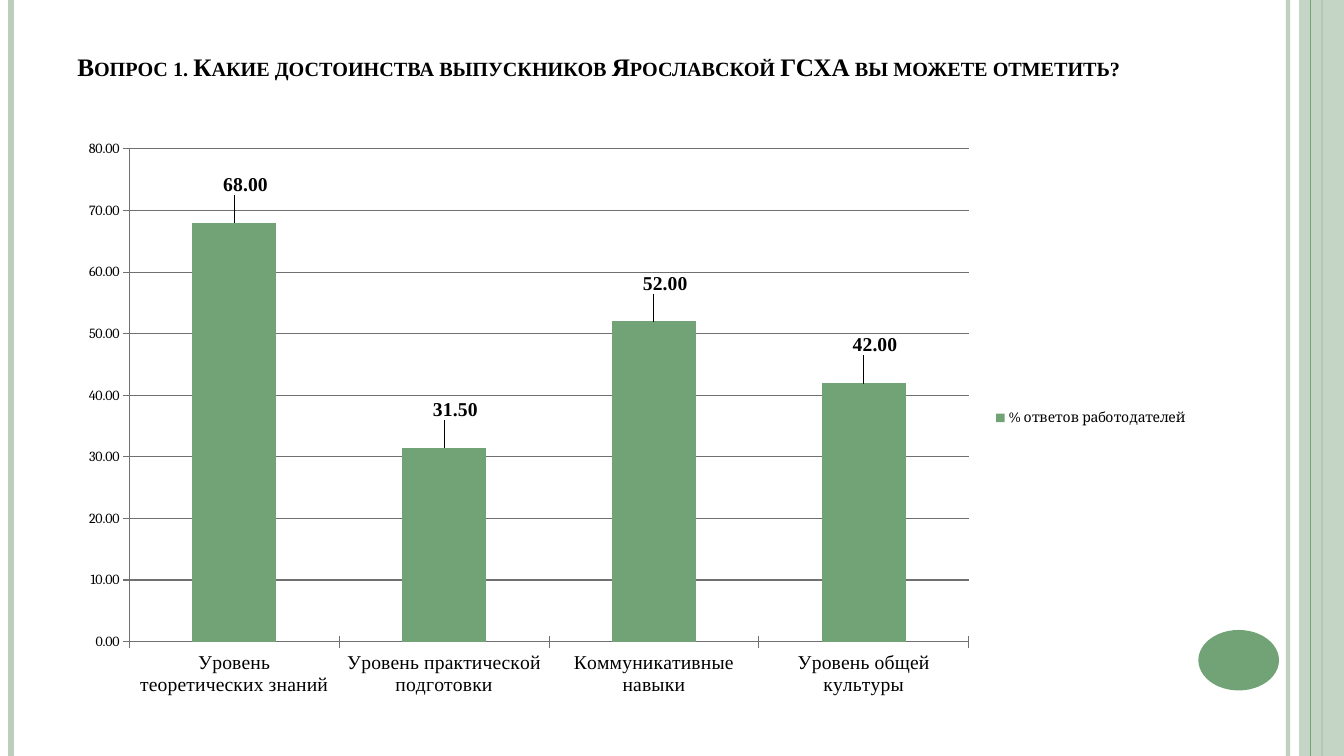
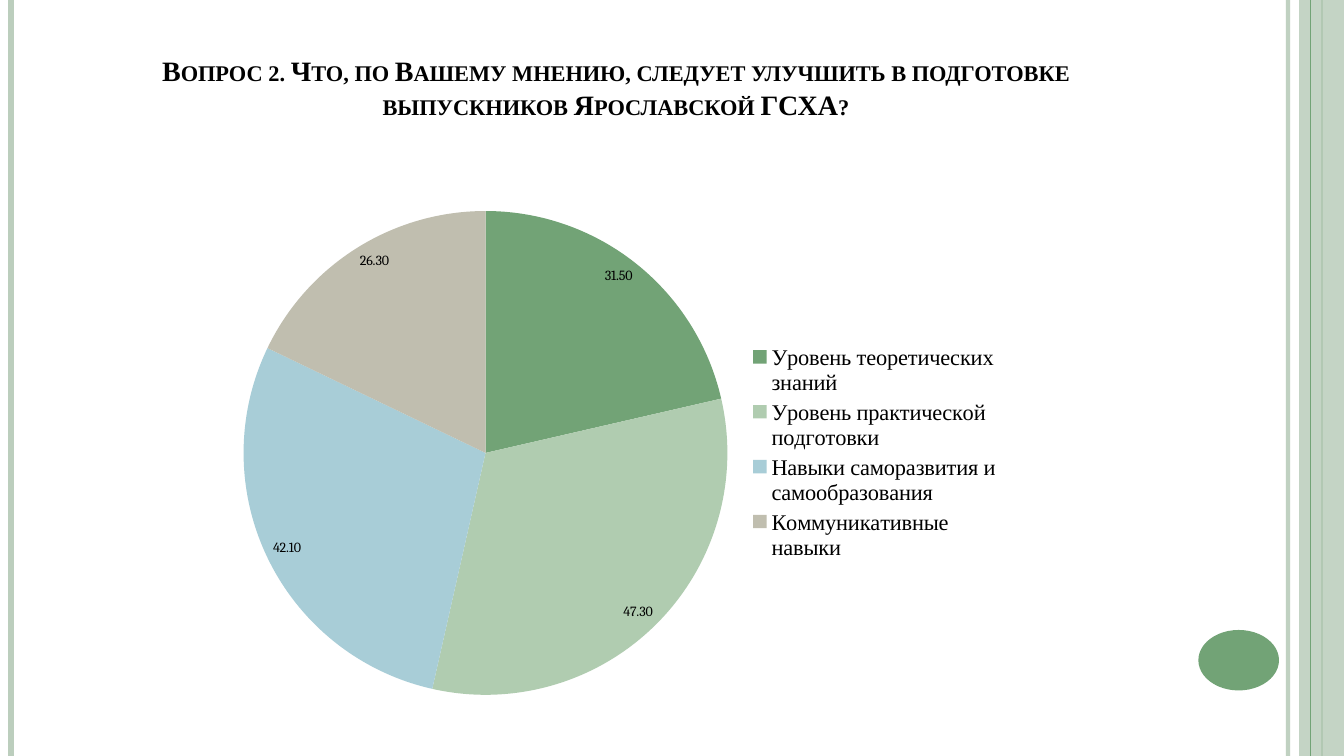
from lxml import etree
from pptx import Presentation
from pptx.chart import data as chart_data
from pptx.dml.color import RGBColor
from pptx.enum import chart as chart_enum, shapes, text
from pptx.oxml import ns
from pptx.util import Pt

GREEN = RGBColor(0x72, 0xA3, 0x76)
PALE_GREEN = RGBColor(0xBC, 0xCE, 0xBD)
LIGHT_GREEN = RGBColor(0xB0, 0xCC, 0xB0)
BLUE = RGBColor(0xA8, 0xCD, 0xD7)
SAND = RGBColor(0xC0, 0xBE, 0xAF)
GRAY = RGBColor(0x70, 0x70, 0x70)
BLACK = RGBColor(0, 0, 0)
SERIF = "Times New Roman"
BODY = "Cambria"


def write_title(box, wording, size, align):
    frame = box.text_frame
    frame.word_wrap = True
    frame.auto_size = text.MSO_AUTO_SIZE.NONE
    frame.vertical_anchor = text.MSO_ANCHOR.BOTTOM
    para = frame.paragraphs[0]
    para.alignment = align
    span = para.add_run()
    span.text = wording
    span.font.name = SERIF
    span.font.size = Pt(size)
    span.font.bold = True
    span.font.color.rgb = BLACK
    span.font._element.set("cap", "small")


def set_layout(parent, index, **settings):
    for old in parent.xpath("c:layout"):
        parent.remove(old)
    layout_node = etree.Element(ns.qn("c:layout"))
    manual = etree.SubElement(layout_node, ns.qn("c:manualLayout"))
    for name, value in settings.items():
        etree.SubElement(manual, ns.qn(f"c:{name}")).set("val", str(value))
    parent.insert(index, layout_node)


deck = Presentation()
deck.slide_width = Pt(960)
deck.slide_height = Pt(540)
layout = deck.slide_layouts[5]

questions = [
    {
        "title": "Вопрос 1. Какие достоинства выпускников Ярославской ГСХА вы можете отметить?",
        "title_box": (48, 22, 828, 40), "size": 18, "align": text.PP_ALIGN.LEFT,
        "kind": chart_enum.XL_CHART_TYPE.COLUMN_CLUSTERED,
        "chart_box": (48, 92, 808, 413), "plot_box": (0.055, 0.035, 0.742, 0.852),
        "series": "% ответов работодателей",
        "answers": {
            "Уровень теоретических знаний": 68,
            "Уровень практической подготовки": 31.5,
            "Коммуникативные навыки": 52,
            "Уровень общей культуры": 42,
        },
    },
    {
        "title": "Вопрос 2. Что, по Вашему мнению, следует улучшить в подготовке выпускников Ярославской ГСХА?",
        "title_box": (48, 22, 784, 68), "size": 20, "align": text.PP_ALIGN.CENTER,
        "kind": chart_enum.XL_CHART_TYPE.PIE,
        "chart_box": (160.5, 140.5, 562, 366.5), "plot_box": (0.024, 0.027, 0.615, 0.945),
        "series": "Series 1",
        "answers": {
            "Уровень теоретических знаний": 31.5,
            "Уровень практической подготовки": 47.3,
            "Навыки саморазвития и самообразования": 42.1,
            "Коммуникативные навыки": 26.3,
        },
    },
]

charts = []
pages = []
for question in questions:
    page = deck.slides.add_slide(layout)
    pages.append(page)
    title = page.shapes.title
    title.left, title.top, title.width, title.height = map(Pt, question["title_box"])
    write_title(title, question["title"], question["size"], question["align"])

    figures = chart_data.CategoryChartData(number_format="0.00")
    figures.categories = list(question["answers"])
    figures.add_series(question["series"], list(question["answers"].values()))
    chart = page.shapes.add_chart(
        question["kind"], *map(Pt, question["chart_box"]), figures
    ).chart
    charts.append(chart)
    chart.has_title = False
    chart.font.name = BODY
    chart.font.size = Pt(10)
    chart.font.color.rgb = BLACK
    chart.has_legend = True
    chart.legend.position = chart_enum.XL_LEGEND_POSITION.RIGHT
    chart.legend.include_in_layout = False
    x, y, w, h = question["plot_box"]
    set_layout(
        chart.element.xpath(".//c:plotArea")[0], 0, layoutTarget="inner",
        xMode="edge", yMode="edge", x=x, y=y, w=w, h=h,
    )
    labels = chart.plots[0].series[0].data_labels
    labels.show_value = True
    labels.number_format = "0.00"
    labels.number_format_is_linked = False

columns, pie = charts

columns.plots[0].vary_by_categories = False
columns.plots[0].gap_width = 150
bars = columns.plots[0].series[0]
bars.format.fill.solid()
bars.format.fill.fore_color.rgb = GREEN
for axis in (columns.category_axis, columns.value_axis):
    axis.major_tick_mark = chart_enum.XL_TICK_MARK.CROSS
    axis.minor_tick_mark = chart_enum.XL_TICK_MARK.NONE
    axis.format.line.color.rgb = GRAY
    axis.format.line.width = Pt(0.75)
columns.category_axis.tick_labels.font.name = SERIF
columns.category_axis.tick_labels.font.size = Pt(14)
scale = columns.value_axis
scale.minimum_scale = 0
scale.maximum_scale = 80
scale.major_unit = 10
scale.tick_labels.number_format = "0.00"
scale.tick_labels.number_format_is_linked = False
scale.has_major_gridlines = True
scale.major_gridlines.format.line.color.rgb = GRAY
scale.major_gridlines.format.line.width = Pt(0.75)
bar_labels = [bars.points[index].data_label for index in range(4)]
for label in [bars.data_labels, *bar_labels]:
    label.position = chart_enum.XL_LABEL_POSITION.OUTSIDE_END
    label.font.name = SERIF
    label.font.size = Pt(14)
    label.font.bold = True
    label.font.color.rgb = BLACK
for node in columns.element.xpath(".//c:dLbl"):
    set_layout(node, 1, x=0.01, y=-0.04)

pie.plots[0].vary_by_categories = True
pie.legend.font.name = SERIF
pie.legend.font.size = Pt(16)
slices = pie.plots[0].series[0]
slices.data_labels.position = chart_enum.XL_LABEL_POSITION.INSIDE_END
for index, color in enumerate((GREEN, LIGHT_GREEN, BLUE, SAND)):
    fill = slices.points[index].format.fill
    fill.solid()
    fill.fore_color.rgb = color

drawing = pages[0].shapes
rails = []
for x, color, width in (
    (920, PALE_GREEN, 3), (8, PALE_GREEN, 4.5), (944, GREEN, 1.5), (936, GREEN, 0.75)
):
    rail = drawing.add_connector(shapes.MSO_CONNECTOR.STRAIGHT, Pt(x), 0, Pt(x), Pt(540))
    rail.line.color.rgb = color
    rail.line.width = Pt(width)
    etree.SubElement(rail.element.spPr, ns.qn("a:effectLst"))
    rails.append(rail)

panels = []
for preset, place, color in (
    (shapes.MSO_SHAPE.RECTANGLE, (928, 0, 32, 540), PALE_GREEN),
    (shapes.MSO_SHAPE.OVAL, (856, 450, 57.6, 43.2), GREEN),
):
    panel = drawing.add_shape(preset, *map(Pt, place))
    panel.shadow.inherit = False
    panel.fill.solid()
    panel.fill.fore_color.rgb = color
    panel.line.fill.background()
    panels.append(panel)
band, oval = panels

for shape, percent in ((rails[0], 93), (band, 87)):
    tint = shape.element.spPr.xpath(".//a:srgbClr")[0]
    etree.SubElement(tint, ns.qn("a:alpha")).set("val", str(percent * 1000))

for number, shape in enumerate([*rails[:3], band, rails[3], oval], start=101):
    shape.element.xpath(".//p:cNvPr")[0].set("id", str(number))
    layout.shapes.element.append(shape.element)

deck.save("out.pptx")
